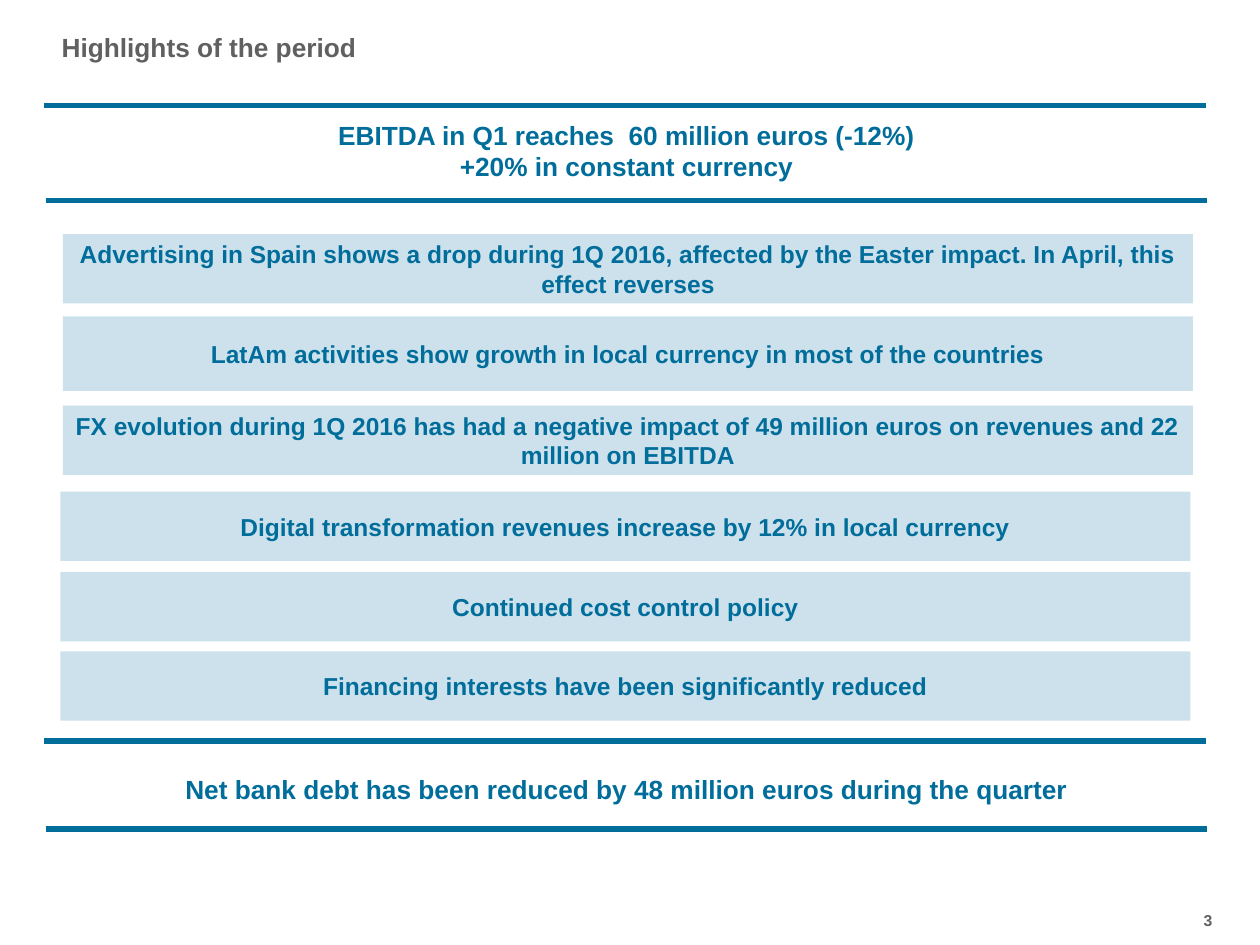
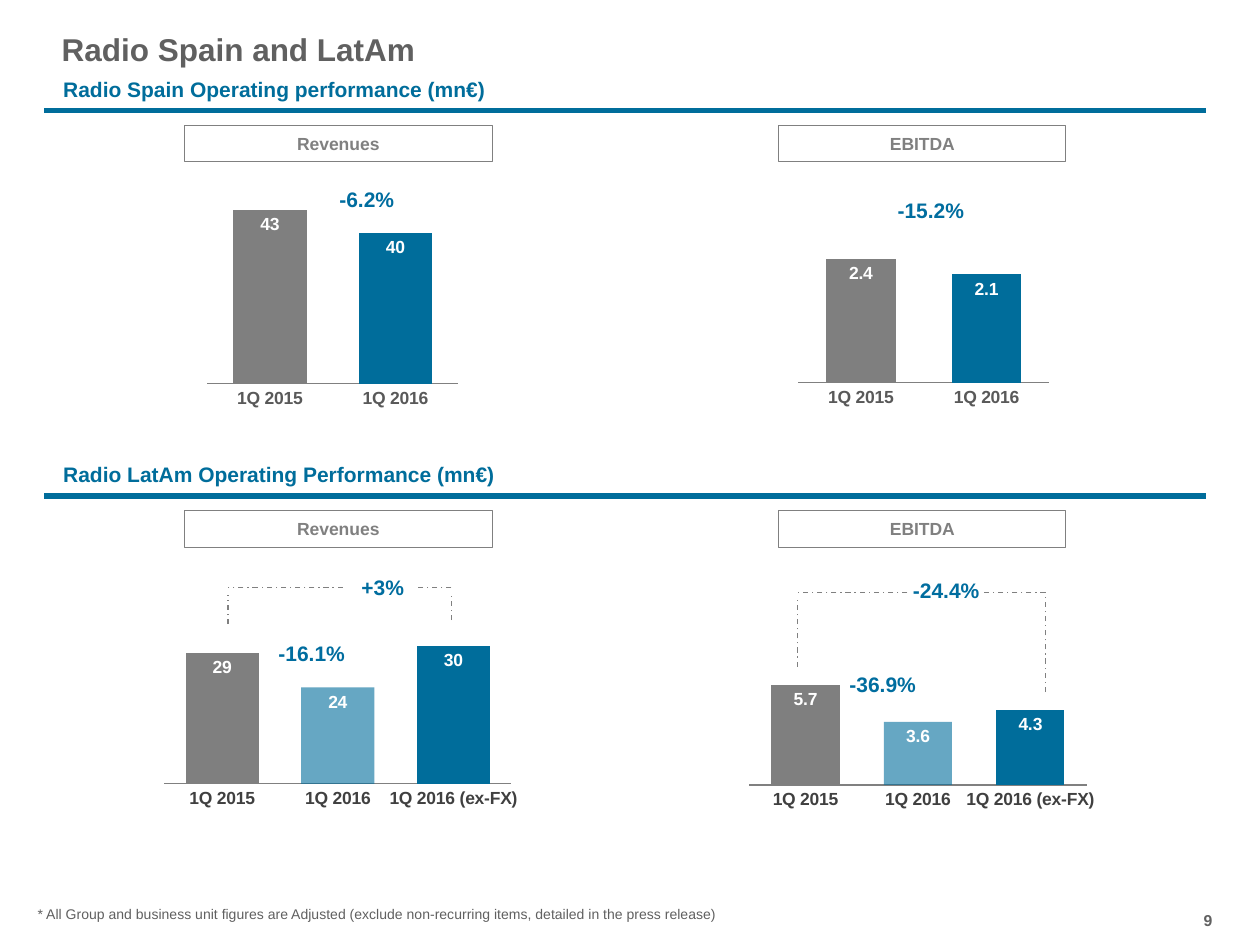
from lxml import etree
from pptx import Presentation
from pptx.chart.data import CategoryChartData
from pptx.dml.color import RGBColor
from pptx.enum.chart import XL_CHART_TYPE, XL_LABEL_POSITION, XL_TICK_MARK
from pptx.enum.dml import MSO_LINE
from pptx.enum.shapes import MSO_CONNECTOR, MSO_SHAPE
from pptx.enum.text import MSO_ANCHOR, MSO_AUTO_SIZE, PP_ALIGN
from pptx.oxml import parse_xml
from pptx.oxml.ns import nsdecls, qn
from pptx.util import Cm, Pt

LEFT, MID, RIGHT = PP_ALIGN.LEFT, PP_ALIGN.CENTER, PP_ALIGN.RIGHT
TOP, MIDDLE = MSO_ANCHOR.TOP, MSO_ANCHOR.MIDDLE
COLUMN = XL_CHART_TYPE.COLUMN_CLUSTERED
INSIDE = XL_LABEL_POSITION.INSIDE_END
NO_TICK = XL_TICK_MARK.NONE
DASH = MSO_LINE.DASH_DOT
STRAIGHT = MSO_CONNECTOR.STRAIGHT
RECT = MSO_SHAPE.RECTANGLE
FIXED = MSO_AUTO_SIZE.NONE

FONT = "Arial"
HUES = {
    "blue": "006D9B", "tint": "006D9F", "title": "606060", "grey": "808080",
    "bar": "7F7F7F", "axis": "595959", "dark": "404040", "white": "FFFFFF",
}
RULE_LEFT, RULE_WIDTH = 0.89, 23.42

POINTS = [
    (1.27, 4.72, 1.4, "Advertising in Spain shows a drop during 1Q 2016, affected by "
     "the Easter impact. In April, this effect reverses"),
    (1.27, 6.38, 1.5, "LatAm activities show growth in local currency in most of the countries"),
    (1.27, 8.18, 1.4, "FX evolution during 1Q 2016 has had a negative impact of 49 million "
     "euros on revenues and 22 million on EBITDA"),
    (1.22, 9.91, 1.4, "Digital transformation revenues increase by 12% in local currency"),
    (1.22, 11.53, 1.4, "Continued cost control policy"),
    (1.22, 13.13, 1.4, "Financing interests have been significantly reduced"),
]
YEARS = ["1Q 2015", "1Q 2016"]
TERMS = YEARS + ["1Q 2016 (ex-FX)"]
SALES, PROFIT = ("Revenues", 3.71, 6.22), ("EBITDA", 15.7, 5.79)
SPAIN = [
    (SALES, {
        "box": (0.02, 1.22, 5.56, 4.7), "cats": YEARS, "vals": [43, 40], "range": (20, 45),
        "gap": 71, "plot": (0.08, 0.04, 0.91, 0.81), "form": "#,##0", "ink": "axis",
    }, [("-6.2%", 2.01, 1.22, 3.35)], None),
    (PROFIT, {
        "box": (0.23, 2.24, 5.33, 3.56), "cats": YEARS, "vals": [2.4, 2.1], "range": (0, 2.5),
        "gap": 81, "plot": (0.03, 0.1, 0.95, 0.73), "form": "#,##0.0", "ink": "axis",
    }, [("-15.2%", 1.72, 1.43, 2.69)], None),
]
LATAM = [
    (SALES, {
        "box": (-0.41, 1.91, 7.7, 4.29), "cats": TERMS, "vals": [29, 24, 30], "range": (10, 35),
        "gap": 58, "plot": (0, 0.03, 0.91, 0.81), "form": "#,##0", "ink": "dark",
    }, [("-16.1%", 1.75, 2.59, 1.65), ("+3%", 2.66, 1.27, 2.69)],
     (0.89, 1.55, 4.5, (2.31, 3.81), (0.74, 0.66))),
    (PROFIT, {
        "box": (-0.61, -1.78, 7.49, 8.71), "cats": TERMS, "vals": [5.7, 3.6, 4.3],
        "range": (0, 20), "gap": 65, "plot": (0, 0.03, 0.91, 0.81), "form": "#,##0.0",
        "ink": "dark",
    }, [("-36.9%", 1.32, 3.23, 1.55), ("-24.4%", 2.6, 1.33, 1.55)],
     (0.38, 1.65, 5, (2.21, 3.73), (1.5, 2.01))),
]


def hue(name):
    """Return the named colour."""
    return RGBColor.from_string(HUES[name])


def place(box):
    """Turn a box in centimetres into lengths."""
    return [Cm(side) for side in box]


def style(font, size, ink, bold=True):
    """Set the face, size, colour and weight of a font."""
    font.name, font.size, font.bold = FONT, Pt(size), bold
    font.color.rgb = hue(ink)


def write(frame, text, size, ink, align=LEFT, anchor=TOP, bold=True):
    """Fill a text frame and format its runs."""
    frame.text = text
    frame.word_wrap = True
    frame.vertical_anchor = anchor
    for para in frame.paragraphs:
        para.alignment = align
        for run in para.runs:
            style(run.font, size, ink, bold)


def label(slide, box, text, size, ink, align=LEFT, anchor=TOP, bold=True):
    """Add a text box and return its frame."""
    frame = slide.shapes.add_textbox(*place(box)).text_frame
    write(frame, text, size, ink, align, anchor, bold)
    return frame


def trim(frame):
    """Take away the side insets of a frame."""
    frame.margin_left = frame.margin_right = 0


def fade(node, share):
    """Make the first colour in a node see-through."""
    tint = next(node.iter(qn("a:srgbClr")))
    etree.SubElement(tint, qn("a:alpha")).set("val", str(share * 1000))


def stroke(slide, start, end, ink="blue", width=3, dash=None):
    """Draw a straight line without a shadow."""
    line = slide.shapes.add_connector(STRAIGHT, *place(start + end))
    line.line.color.rgb = hue(ink)
    line.line.width = Pt(width)
    if dash:
        line.line.dash_style = dash
    etree.SubElement(line._element.spPr, qn("a:effectLst"))


def rule(slide, left, top):
    """Draw a wide blue rule."""
    stroke(slide, (left, top), (left + RULE_WIDTH, top))


def block(slide, box):
    """Add a plain rectangle with no fill or shadow."""
    shape = slide.shapes.add_shape(RECT, *place(box))
    shape.shadow.inherit = False
    shape.fill.background()
    shape.line.fill.background()
    return shape


def start(deck, title, size, top, page):
    """Add a slide with its title and page number."""
    slide = deck.slides.add_slide(deck.slide_layouts[5])
    head = slide.shapes.title
    head.left, head.top, head.width, head.height = place((0.99, top, 21.41, 0.99))
    write(head.text_frame, title, size, "title")
    head.text_frame.auto_size = FIXED
    label(slide, (23.7, 18.24, 0.99, 0.53), page, 9, "title", RIGHT)
    return slide


def band(slide, box, drop, text):
    """Set a message between two rules."""
    left, top, width, height = box
    rule(slide, left, top)
    rule(slide, left + 0.03, top + height)
    label(slide, (left + 0.35, top + drop, width - 0.64, 1.4), text, 15, "blue", MID, MIDDLE)


def point(slide, box, text):
    """Add a tinted bar with one message."""
    shape = block(slide, box)
    shape.fill.solid()
    shape.fill.fore_color.rgb = hue("tint")
    fade(shape._element.spPr, 20)
    write(shape.text_frame, text, 14, "blue", MID, MIDDLE)


def bars(slide, box, plan):
    """Add a column chart inside a box."""
    data = CategoryChartData()
    data.categories = plan["cats"]
    data.add_series("Series 1", plan["vals"])
    chart = slide.shapes.add_chart(COLUMN, *place(box), data).chart
    chart.has_legend = chart.has_title = False
    style(chart.font, 10, plan["ink"])
    clear = f"<c:spPr {nsdecls('c', 'a')}><a:noFill/><a:ln><a:noFill/></a:ln></c:spPr>"
    chart._chartSpace.find(qn("c:txPr")).addprevious(parse_xml(clear))

    scale, base = chart.value_axis, chart.category_axis
    scale.minimum_scale, scale.maximum_scale = plan["range"]
    scale.visible = scale.has_major_gridlines = False
    base.major_tick_mark = base.minor_tick_mark = NO_TICK
    base.format.line.color.rgb = hue("grey")
    style(base.tick_labels.font, 10, plan["ink"])

    plot = chart.plots[0]
    plot.gap_width, plot.vary_by_categories = plan["gap"], False
    series = plot.series[0]
    series.invert_if_negative = False
    count = len(plan["vals"])
    for spot in range(count):
        fill = series.points[spot].format.fill
        fill.solid()
        fill.fore_color.rgb = hue("blue" if spot else "bar")
    if count > 2:
        fade(series._element.findall(qn("c:dPt"))[1], 60)
    marks = series.data_labels
    marks.show_value, marks.position = True, INSIDE
    marks.number_format, marks.number_format_is_linked = plan["form"], False
    style(marks.font, 10, "white")
    frame_plot(chart, plan["plot"])


def frame_plot(chart, parts):
    """Fix the inner plot area as shares of the chart."""
    area = chart._chartSpace.chart.plotArea
    for old in area.findall(qn("c:layout")):
        area.remove(old)
    layout = etree.Element(qn("c:layout"))
    inner = etree.SubElement(layout, qn("c:manualLayout"))
    names = ["layoutTarget", "xMode", "yMode", "x", "y", "w", "h"]
    for name, value in zip(names, ("inner", "edge", "edge") + parts):
        etree.SubElement(inner, qn(f"c:{name}")).set("val", str(value))
    area.insert(0, layout)


def bracket(slide, left, top, width, gap, feet):
    """Draw a dashed bracket with a gap for its label."""
    right = left + width
    pieces = [
        ((left + gap[0], top), (left, top)),
        ((right, top), (left + gap[1], top)),
        ((left, top + feet[0]), (left, top + 0.15)),
        ((right, top + feet[1]), (right, top + 0.1)),
    ]
    for near, far in pieces:
        stroke(slide, near, far, "grey", 0.75, DASH)


def panel(slide, box, name, plan, tags, span):
    """Place a heading, its chart and the changes in a box."""
    left, top = box[:2]
    head = block(slide, box)
    head.line.color.rgb = hue("grey")
    head.line.width = Pt(0.5)
    write(head.text_frame, name, 10, "grey", MID, MIDDLE)
    trim(head.text_frame)
    across, down, width, height = plan["box"]
    bars(slide, (left + across, top + down, width, height), plan)
    if span:
        bracket(slide, left + span[0], top + span[1], *span[2:])
    for text, across, down, width in tags:
        spot = (left + across, top + down, width, 0.56)
        trim(label(slide, spot, text, 12, "tint", MID, MIDDLE))


def section(slide, top, title, panels):
    """Place a titled rule and the panels below it."""
    table = slide.shapes.add_table(1, 1, *place((1.02, top, 23.8, 0.99))).table
    table.first_row = table.horz_banding = False
    cell = table.cell(0, 0)
    cell.fill.background()
    write(cell.text_frame, title, 12, "blue")
    rule(slide, RULE_LEFT, top + 0.78)
    for (name, left, width), plan, tags, span in panels:
        panel(slide, (left, top + 1.07, width, 0.74), name, plan, tags, span)


def recap(deck):
    """Build the slide of highlights."""
    slide = start(deck, "Highlights of the period", 15, 0.51, "3")
    band(slide, (RULE_LEFT, 2.13, RULE_WIDTH, 1.91), 0.21,
         "EBITDA in Q1 reaches  60 million euros (-12%)\n+20% in constant currency")
    for left, top, height, text in POINTS:
        point(slide, (left, top, 22.78, height), text)
    band(slide, (RULE_LEFT, 14.94, RULE_WIDTH, 1.77), 0.27,
         "Net bank debt has been reduced by 48 million euros during the quarter")


def radio(deck):
    """Build the slide of radio results."""
    slide = start(deck, "Radio Spain and LatAm", 18, 0.48, "9")
    section(slide, 1.45, "Radio Spain Operating performance (mn€)", SPAIN)
    section(slide, 9.22, "Radio LatAm Operating Performance (mn€)", LATAM)
    label(slide, (0.51, 18.14, 22.6, 0.71),
          "* All Group and business unit figures are Adjusted (exclude non-recurring "
          "items, detailed in the press release)", 8, "title", bold=False)


def main():
    """Build and save the deck."""
    deck = Presentation()
    deck.slide_width, deck.slide_height = Cm(25.4), Cm(19.05)
    recap(deck)
    radio(deck)
    deck.save("out.pptx")


if __name__ == "__main__":
    main()
